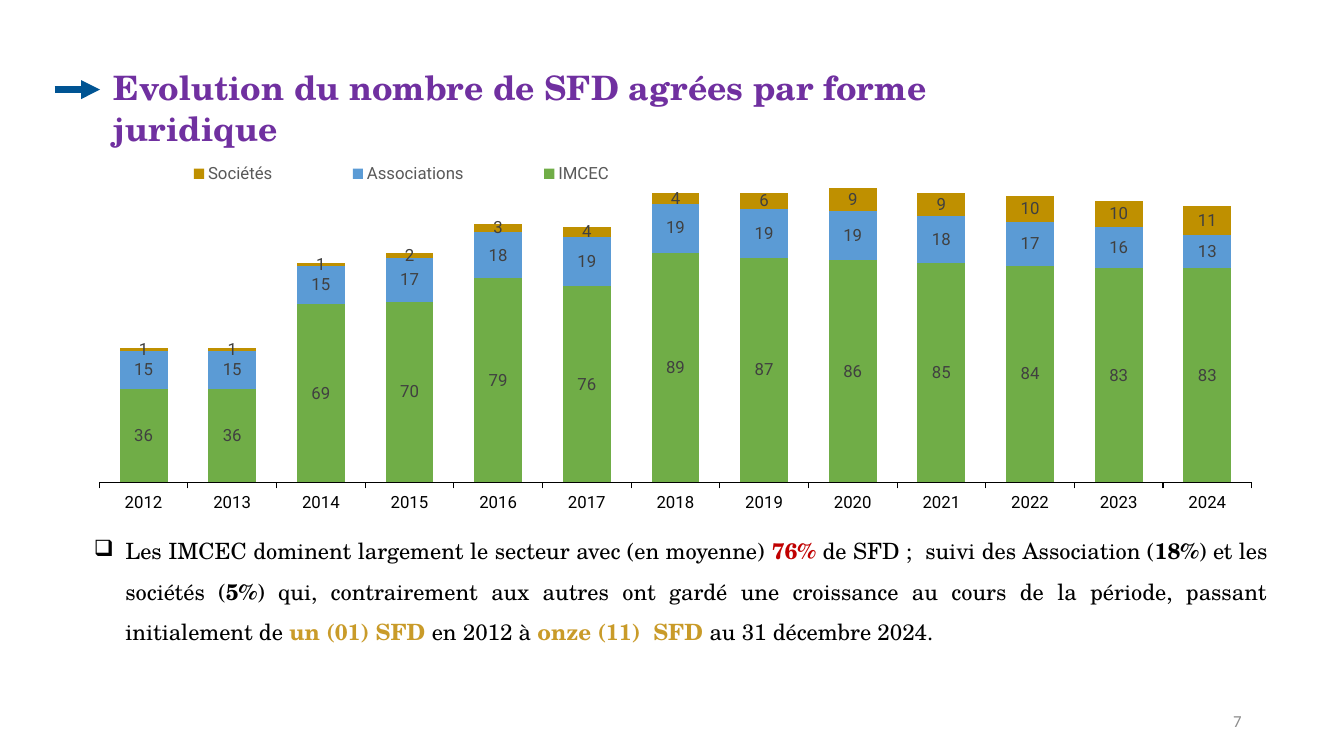
from lxml import etree
from pptx import Presentation
from pptx.chart.data import CategoryChartData
from pptx.dml.color import RGBColor
from pptx.enum.chart import XL_CHART_TYPE, XL_LABEL_POSITION, XL_LEGEND_POSITION, XL_TICK_MARK
from pptx.enum.shapes import MSO_CONNECTOR
from pptx.enum.text import MSO_ANCHOR, PP_ALIGN
from pptx.oxml.ns import qn
from pptx.util import Pt

STACKED = XL_CHART_TYPE.COLUMN_STACKED
CENTER_LABEL = XL_LABEL_POSITION.CENTER
LEGEND_RIGHT = XL_LEGEND_POSITION.RIGHT
TICK_OUT = XL_TICK_MARK.OUTSIDE
STRAIGHT = MSO_CONNECTOR.STRAIGHT
TOP, MIDDLE = MSO_ANCHOR.TOP, MSO_ANCHOR.MIDDLE
LEFT, RIGHT, JUSTIFY = PP_ALIGN.LEFT, PP_ALIGN.RIGHT, PP_ALIGN.JUSTIFY

BLACK = RGBColor(0x00, 0x00, 0x00)
GREY = RGBColor(0x8C, 0x8C, 0x8C)
LEGEND_GREY = RGBColor(0x59, 0x59, 0x59)
LABEL_GREY = RGBColor(0x40, 0x40, 0x40)
PURPLE = RGBColor(0x70, 0x30, 0xA0)
RED = RGBColor(0xC0, 0x00, 0x00)
GOLD = RGBColor(0xC9, 0x9B, 0x29)
NAVY = RGBColor(0x00, 0x54, 0x93)
GREEN = RGBColor(0x70, 0xAD, 0x47)
BLUE = RGBColor(0x5B, 0x9B, 0xD5)
OCHRE = RGBColor(0xBF, 0x90, 0x00)

SERIF, SANS, CHART_FONT = "TeX Gyre Schola", "Calibri", "Roboto"

YEARS = [str(year) for year in range(2012, 2025)]
LEGAL_FORMS = [
    ("IMCEC", GREEN, (36, 36, 69, 70, 79, 76, 89, 87, 86, 85, 84, 83, 83)),
    ("Associations", BLUE, (15, 15, 15, 17, 18, 19, 19, 19, 19, 18, 17, 16, 13)),
    ("Sociétés", OCHRE, (1, 1, 1, 2, 3, 4, 4, 6, 9, 9, 10, 10, 11)),
]

TITLE = [("Evolution du nombre de SFD agrées par forme juridique", PURPLE, True)]
COMMENTARY = [
    ("Les IMCEC dominent largement le secteur avec (en moyenne) ", BLACK, False),
    ("76%", RED, True),
    (" de SFD ;  suivi des Association (", BLACK, False),
    ("18%", BLACK, True),
    (") et les sociétés (", BLACK, False),
    ("5%", BLACK, True),
    (") qui, contrairement aux autres ont gardé une croissance au cours de la "
     "période, passant initialement de ", BLACK, False),
    ("un (01) SFD ", GOLD, True),
    ("en 2012 à ", BLACK, False),
    ("onze (11)  SFD ", GOLD, True),
    ("au 31 décembre 2024.", BLACK, False),
]


def style_font(font, name, size, color, bold=False):
    font.name = name
    font.size = Pt(size)
    font.bold = bold
    font.color.rgb = color


def add_text(page, place, spans, name, size, align=LEFT, anchor=TOP):
    """Add a one-paragraph text box from (text, colour, bold) spans; return the paragraph."""
    box = page.shapes.add_textbox(*map(Pt, place))
    frame = box.text_frame
    frame.word_wrap = True
    frame.vertical_anchor = anchor
    para = frame.paragraphs[0]
    para.alignment = align
    for text, color, bold in spans:
        span = para.add_run()
        span.text = text
        style_font(span.font, name, size, color, bold)
    return para


def add_bullet(para, symbol, indent):
    properties = para._p.get_or_add_pPr()
    properties.set("marL", str(Pt(indent)))
    properties.set("indent", str(-Pt(indent)))
    etree.SubElement(properties, qn("a:buChar")).set("char", symbol)


def add_arrow(page, left, right, y):
    arrow = page.shapes.add_connector(STRAIGHT, Pt(left), Pt(y), Pt(right), Pt(y))
    arrow.line.color.rgb = NAVY
    arrow.line.width = Pt(4.5)
    etree.SubElement(arrow.line._get_or_add_ln(), qn("a:tailEnd")).set("type", "triangle")
    etree.SubElement(arrow._element.spPr, qn("a:effectLst"))


def set_layout(parent, position, fractions, inner=False):
    """Fix a chart part's place, as fractions (x, y, w, h) of the chart."""
    for old in parent.findall(qn("c:layout")):
        parent.remove(old)
    layout = etree.Element(qn("c:layout"))
    manual = etree.SubElement(layout, qn("c:manualLayout"))
    settings = [("layoutTarget", "inner")] if inner else []
    settings += [("xMode", "edge"), ("yMode", "edge")]
    settings += zip("xywh", map(str, fractions))
    for tag, value in settings:
        etree.SubElement(manual, qn("c:" + tag)).set("val", value)
    parent.insert(position, layout)


def style_series(series, color):
    series.format.fill.solid()
    series.format.fill.fore_color.rgb = color
    labels = series.data_labels
    labels.show_value = True
    labels.position = CENTER_LABEL
    style_font(labels.font, CHART_FONT, 12, LABEL_GREY)


def style_axes(chart):
    years = chart.category_axis
    years.major_tick_mark = TICK_OUT
    years.format.line.color.rgb = BLACK
    years.format.line.width = Pt(0.75)
    style_font(years.tick_labels.font, CHART_FONT, 12, BLACK)
    counts = chart.value_axis
    counts.minimum_scale, counts.maximum_scale = 0, 120
    counts.has_major_gridlines = False
    counts.visible = False


def add_legend(chart):
    chart.has_legend = True
    legend = chart.legend
    legend.position = LEGEND_RIGHT
    legend.include_in_layout = False
    style_font(legend.font, CHART_FONT, 12, LEGEND_GREY)
    set_layout(legend._element, 1, (0.03, 0.06, 0.48, 0.08))


def add_forms_chart(page, place):
    data = CategoryChartData()
    data.categories = YEARS
    for name, _, counts in LEGAL_FORMS:
        data.add_series(name, counts)
    chart = page.shapes.add_chart(STACKED, *map(Pt, place), data).chart
    style_font(chart.font, CHART_FONT, 12, BLACK)
    chart.has_title = False
    plot = chart.plots[0]
    plot.gap_width, plot.overlap = 85, 100
    plot.vary_by_categories = False
    for series, (_, color, _) in zip(plot.series, LEGAL_FORMS):
        style_series(series, color)
    style_axes(chart)
    add_legend(chart)
    plot_area = chart._chartSpace.find(".//" + qn("c:plotArea"))
    set_layout(plot_area, 0, (0.013, 0.097, 0.98, 0.815), inner=True)


def main():
    deck = Presentation()
    deck.slide_width, deck.slide_height = Pt(960), Pt(540)
    page = deck.slides.add_slide(deck.slide_layouts[6])

    commentary = add_text(page, (60, 368.5, 852.5, 98), COMMENTARY, SERIF, 16, JUSTIFY, MIDDLE)
    commentary.line_spacing = 1.5
    add_bullet(commentary, "❑", 22.5)
    add_text(page, (678, 500, 216, 29), [("7", GREY, False)], SANS, 12, RIGHT, MIDDLE)
    add_arrow(page, 39, 71.5, 64)
    add_text(page, (74, 44.5, 713.5, 36), TITLE, SERIF, 24)
    add_forms_chart(page, (60, 97, 840, 271.5))

    deck.save("out.pptx")


if __name__ == "__main__":
    main()
